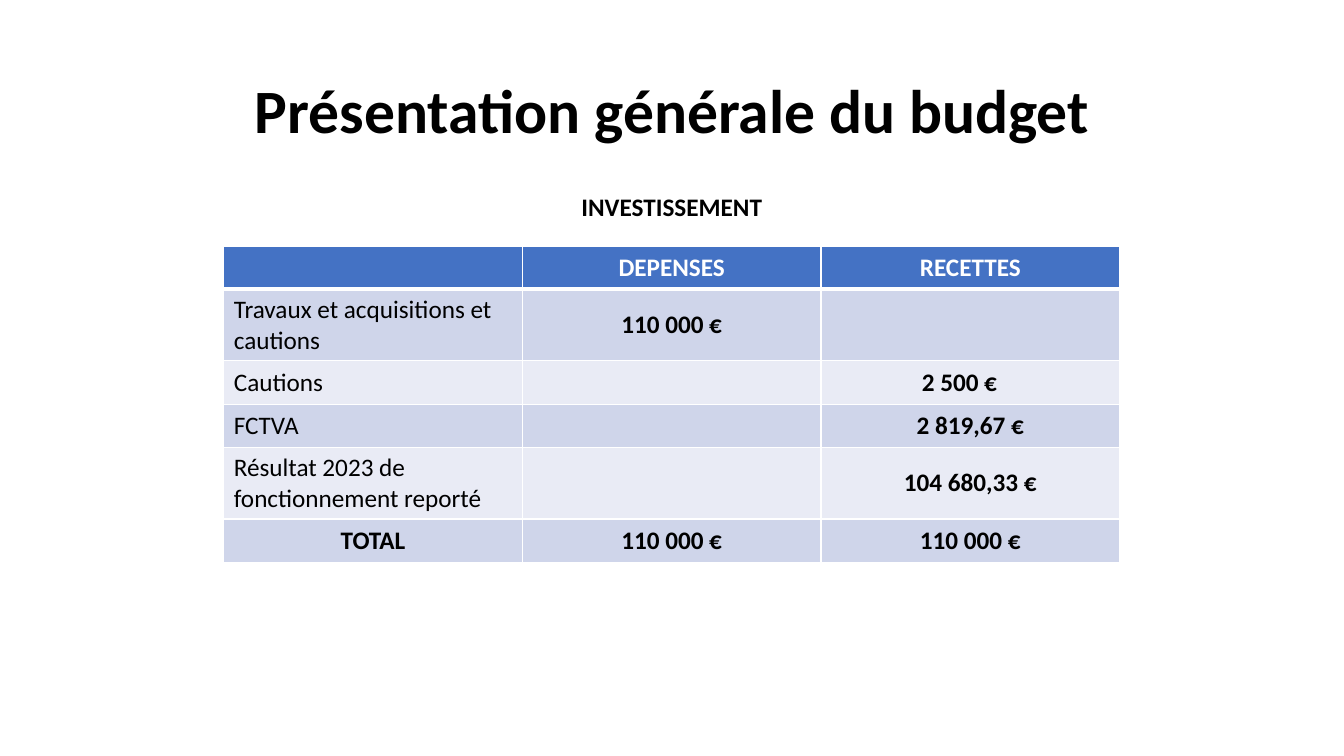
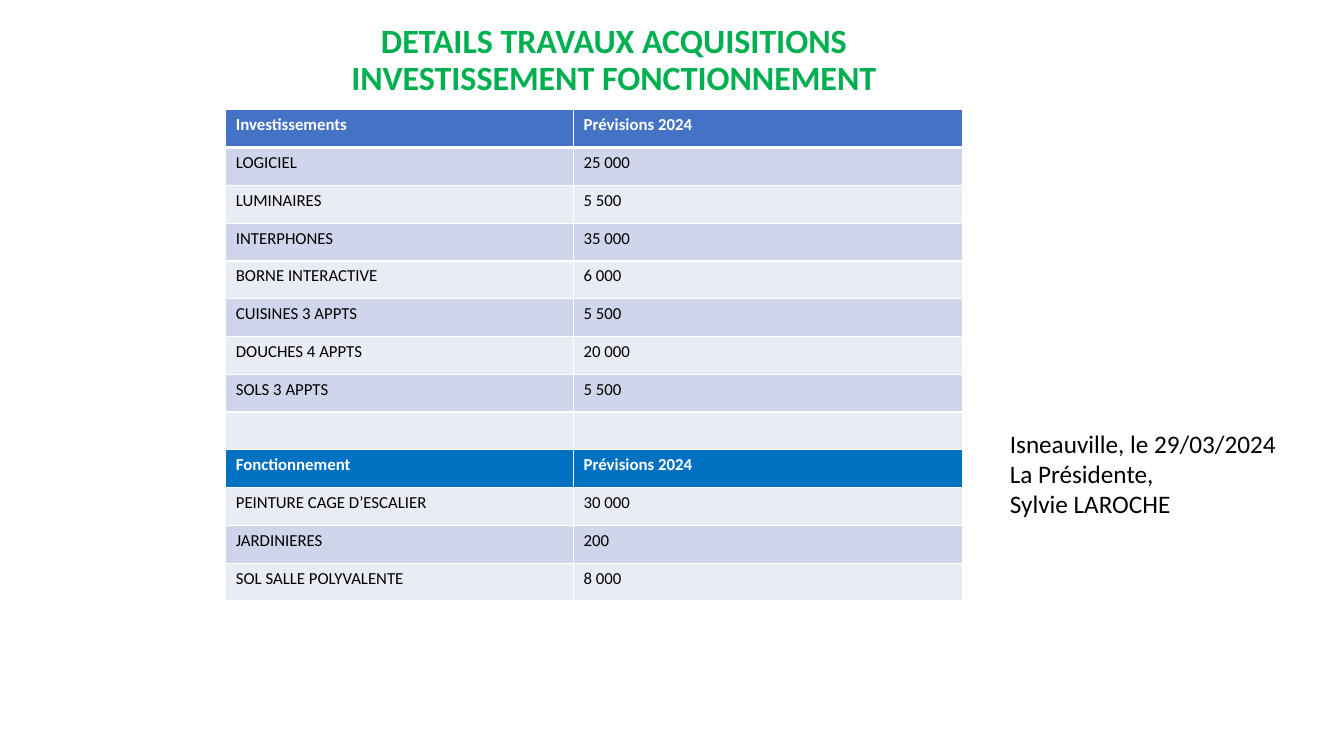
"""Budget overview and detail of planned works, on two slides."""
import pptx
import pptx.dml.color
import pptx.enum.text
import pptx.util
from lxml import etree

COLOURS = {
    "text": "000000",
    "white": "FFFFFF",
    "heading": "4472C4",
    "subheading": "0070C0",
    "dark band": "CFD5EA",
    "light band": "E9EBF5",
    "accent title": "00B050",
}
FONT = "Calibri"
LEFT = pptx.enum.text.PP_ALIGN.LEFT
CENTER = pptx.enum.text.PP_ALIGN.CENTER
TOP = pptx.enum.text.MSO_ANCHOR.TOP
MIDDLE = pptx.enum.text.MSO_ANCHOR.MIDDLE
DRAWING_NS = "{http://schemas.openxmlformats.org/drawingml/2006/main}"

deck = pptx.Presentation()
deck.slide_width = pptx.util.Inches(13.33)
deck.slide_height = pptx.util.Inches(7.5)
across = deck.slide_width / 100
down = deck.slide_height / 100


def write(frame, lines, size, colour="text", bold=False, align=LEFT, spacing=1.0):
    """Fill a text frame with one run per line."""
    frame.word_wrap = True
    for number, line in enumerate(lines):
        paragraph = frame.add_paragraph() if number else frame.paragraphs[0]
        paragraph.alignment = align
        paragraph.line_spacing = spacing
        run = paragraph.add_run()
        run.text = line
        run.font.name = FONT
        run.font.size = pptx.util.Pt(size)
        run.font.bold = bold
        run.font.color.rgb = pptx.dml.color.RGBColor.from_string(COLOURS[colour])


def paint(cell, fill, bottom_width):
    """Give a cell its white borders and its fill."""
    properties = cell._tc.get_or_add_tcPr()
    for side, width in (("lnL", 1), ("lnR", 1), ("lnT", 1), ("lnB", bottom_width)):
        border = etree.SubElement(properties, DRAWING_NS + side, w=str(pptx.util.Pt(width)))
        ink = etree.SubElement(border, DRAWING_NS + "solidFill")
        etree.SubElement(ink, DRAWING_NS + "srgbClr", val=COLOURS["white"])
    cell.fill.solid()
    cell.fill.fore_color.rgb = pptx.dml.color.RGBColor.from_string(COLOURS[fill])


overview = {
    "texts": [
        ((6.9, 5.33, 86.25, 19.33), ["Présentation générale du budget"],
         MIDDLE, dict(size=44, bold=True, align=CENTER, spacing=0.9)),
        ((16.65, 24.67, 66.67, 5.33), ["INVESTISSEMENT"],
         TOP, dict(size=18, bold=True, align=CENTER)),
    ],
    "origin": (16.65, 32.53),
    "columns": [22.22] * 3,
    "heights": [5.73, 9.47, 5.73, 5.73, 9.47, 5.73],
    "headings": {0: "heading"},
    "size": 18,
    "anchor": MIDDLE,
    "amounts": dict(bold=True, align=CENTER),
    "rows": [
        ("", "DEPENSES", "RECETTES"),
        ("Travaux et acquisitions et cautions", "110 000 €", ""),
        ("Cautions", "", "2 500 €"),
        ("FCTVA", "", "2 819,67 €"),
        ("Résultat 2023 de fonctionnement reporté", "", "104 680,33 €"),
        ("TOTAL", "110 000 €", "110 000 €"),
    ],
}
details = {
    "texts": [
        ((21.6, 3.47, 48.15, 9.2),
         ["DETAILS TRAVAUX ACQUISITIONS INVESTISSEMENT FONCTIONNEMENT"],
         MIDDLE, dict(size=24.3, colour="accent title", bold=True, align=CENTER, spacing=0.9)),
        ((74.4, 56, 22.73, 13.47),
         ["Isneauville, le 29/03/2024", "La Présidente,", "Sylvie LAROCHE"],
         TOP, dict(size=18)),
    ],
    "origin": (16.8, 14.53),
    "columns": [25.88, 28.95],
    "heights": [5] * 13,
    "headings": {0: "heading", 9: "subheading"},
    "size": 12,
    "anchor": TOP,
    "amounts": dict(bold=False, align=LEFT),
    "rows": [
        ("Investissements", "Prévisions 2024"),
        ("LOGICIEL", "25 000"),
        ("LUMINAIRES", "5 500"),
        ("INTERPHONES", "35 000"),
        ("BORNE INTERACTIVE", "6 000"),
        ("CUISINES 3 APPTS", "5 500"),
        ("DOUCHES 4 APPTS", "20 000"),
        ("SOLS 3 APPTS", "5 500"),
        ("", ""),
        ("Fonctionnement", "Prévisions 2024"),
        ("PEINTURE CAGE D’ESCALIER", "30 000"),
        ("JARDINIERES", "200"),
        ("SOL SALLE POLYVALENTE", "8 000"),
    ],
}

for page in (overview, details):
    slide = deck.slides.add_slide(deck.slide_layouts[6])
    for (left, top, width, height), lines, anchor, style in page["texts"]:
        box = slide.shapes.add_textbox(
            int(left * across), int(top * down), int(width * across), int(height * down))
        box.text_frame.vertical_anchor = anchor
        write(box.text_frame, lines, **style)

    left, top = page["origin"]
    budget = slide.shapes.add_table(
        len(page["rows"]), len(page["columns"]), int(left * across), int(top * down),
        int(sum(page["columns"]) * across), int(sum(page["heights"]) * down)).table
    for column, width in zip(budget.columns, page["columns"]):
        column.width = int(width * across)
    for number, (entries, height) in enumerate(zip(page["rows"], page["heights"])):
        budget.rows[number].height = int(height * down)
        heading = page["headings"].get(number)
        band = "dark band" if number % 2 else "light band"
        for place, entry in enumerate(entries):
            cell = budget.cell(number, place)
            paint(cell, heading or band, 1 if number else 3)
            cell.vertical_anchor = page["anchor"]
            if not entry:
                cell.margin_top = cell.margin_bottom = 0
                continue
            style = dict(page["amounts"])
            if place == 0 and entry != "TOTAL":
                style = dict(bold=False, align=LEFT)
            if heading:
                style.update(bold=True, colour="white")
            if entry == "2 500 €":
                style["align"] = LEFT
                cell.margin_left = int(7.5 * across)
            write(cell.text_frame, [entry], page["size"], **style)

deck.save("out.pptx")
